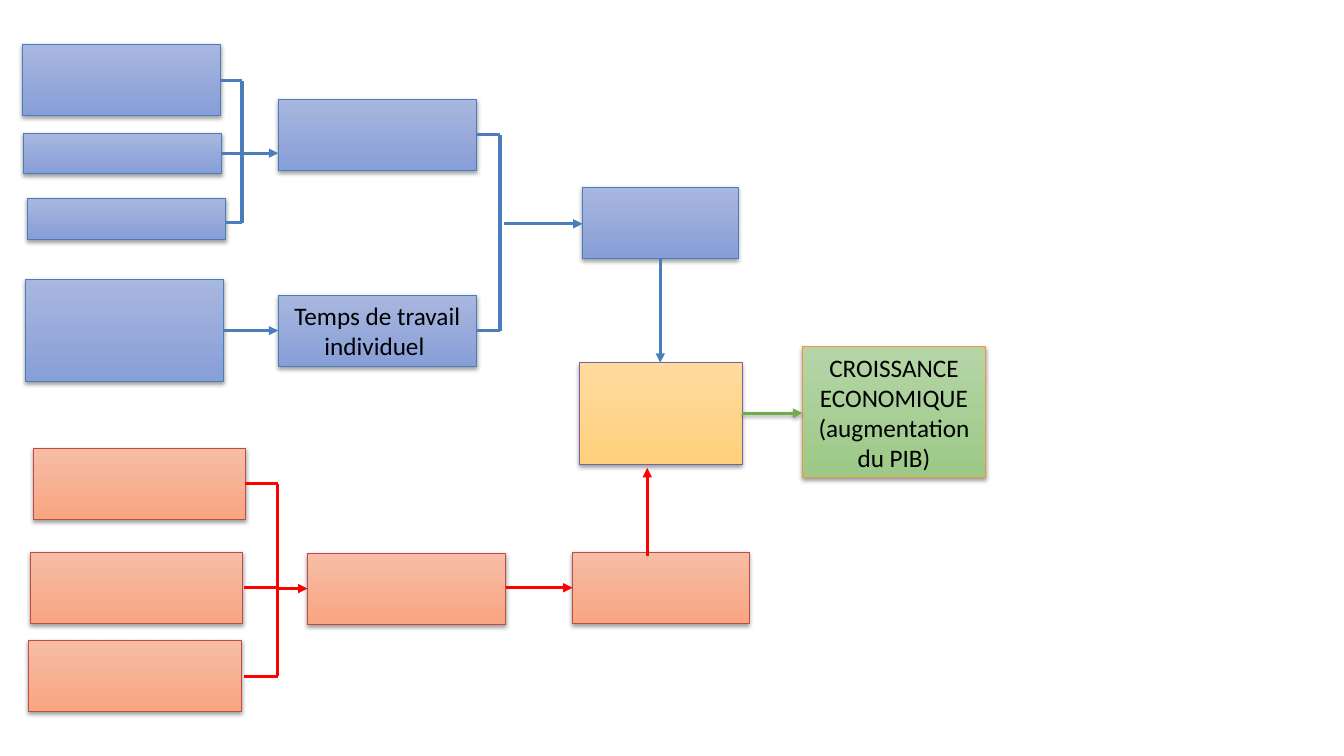
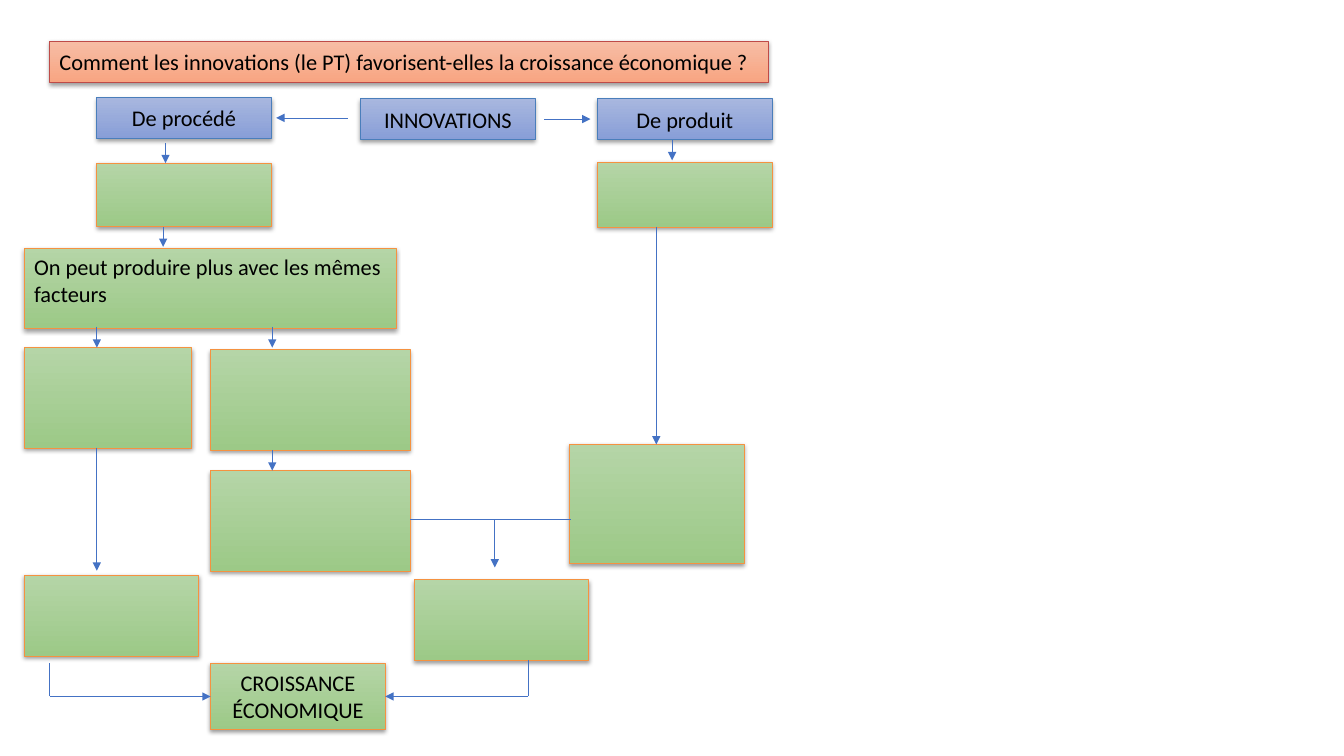
from dataclasses import dataclass

from lxml import etree
from pptx import Presentation
from pptx.dml.color import RGBColor
from pptx.enum import shapes, text
from pptx.oxml.ns import qn
from pptx.util import Cm, Pt


@dataclass(frozen=True)
class Look:
    top: str
    base: str
    edge: str


@dataclass(frozen=True)
class Pen:
    color: str
    width: float
    shade: int = 0


class Theme:
    font = "Calibri"
    ink = "000000"
    large, small = 18, 16
    edge = 0.5
    shade = 38
    blue = Look("A8B7DF", "889ED7", "4A7EBB")
    red = Look("F7BDA5", "F8A582", "BE4B48")
    green = Look("B5D5A7", "9CC987", "F59240")
    gold = Look("FFDB9E", "FFD07C", "7D5FA0")
    blue_pen = Pen("4A7EBB", 2.25)
    red_pen = Pen("FF0000", 2.25)
    green_pen = Pen("70AD47", 2.25, 35)
    thin_pen = Pen("4472C4", 0.5)


def rgb(code):
    return RGBColor.from_string(code)


def cast(effects, alpha):
    """Put a soft shadow that falls straight down into an effect list."""
    drop = etree.SubElement(effects, qn("a:outerShdw"), blurRad="40000", dist="20000",
                            dir="5400000", rotWithShape="0")
    tint = etree.SubElement(drop, qn("a:srgbClr"), val=Theme.ink)
    etree.SubElement(tint, qn("a:alpha"), val=str(alpha * 1000))


@dataclass
class Area:
    """Part of a slide; lengths are in cm from its top left corner."""
    page: object
    left: float
    top: float

    def spot(self, x, y):
        return Cm(self.left + x), Cm(self.top + y)

    def block(self, x, y, w, h, look, words="", size=Theme.small,
              align=text.PP_ALIGN.CENTER, anchor=text.MSO_ANCHOR.MIDDLE):
        box = self.page.shapes.add_shape(shapes.MSO_SHAPE.RECTANGLE,
                                         *self.spot(x, y), Cm(w), Cm(h))
        box.fill.gradient()
        box.fill.gradient_angle = 270
        for stop, code in zip(box.fill.gradient_stops, (look.top, look.base)):
            stop.color.rgb = rgb(code)
        # Evenly spread from edge to edge
        for stop, place in zip(box.fill.gradient_stops, (0, 1)):
            stop.position = place
        box.line.color.rgb = rgb(look.edge)
        box.line.width = Pt(Theme.edge)
        box.shadow.inherit = False
        cast(box.element.spPr.find(qn("a:effectLst")), Theme.shade)
        if words:
            frame = box.text_frame
            frame.word_wrap = True
            frame.vertical_anchor = anchor
            para = frame.paragraphs[0]
            para.alignment = align
            run = para.add_run()
            run.text = words
            run.font.name = Theme.font
            run.font.size = Pt(size)
            run.font.color.rgb = rgb(Theme.ink)

    def line(self, start, end, pen, head=False):
        link = self.page.shapes.add_connector(
            shapes.MSO_CONNECTOR.STRAIGHT, *self.spot(*start), *self.spot(*end))
        link.line.color.rgb = rgb(pen.color)
        link.line.width = Pt(pen.width)
        props = link.element.spPr
        if head:
            etree.SubElement(props.find(qn("a:ln")), qn("a:tailEnd"), type="triangle")
        effects = etree.SubElement(props, qn("a:effectLst"))
        if pen.shade:
            cast(effects, pen.shade)

    def arrow(self, start, end, pen):
        self.line(start, end, pen, head=True)

    def drop(self, x, start, end):
        self.arrow((x, start), (x, end), Theme.thin_pen)

    def merge(self, starts, spine, pen):
        """Lead several points to one upright line."""
        for x, y in starts:
            self.line((x, y), (spine, y), pen)
        self.line((spine, starts[0][1]), (spine, starts[-1][1]), pen)


def labour(area):
    look, pen = Theme.blue, Theme.blue_pen
    wide, tall, slim = 5, 1.79, 1.03
    for x, y, h in ((0, 0, tall), (0.02, 2.23, slim), (0.13, 3.88, slim), (0.08, 5.92, 2.57)):
        area.block(x, y, wide, h, look)
    area.block(6.45, 1.39, wide, tall, look)
    area.block(6.45, 6.32, wide, tall, look, "Temps de travail individuel ", Theme.large)
    area.block(14.12, 3.6, 3.92, tall, look)
    area.merge([(5, 0.91), (5, 2.74), (5.13, 4.49)], 5.54, pen)
    area.merge([(11.45, 2.28), (11.45, 7.21)], 12.04, pen)
    for x, y, end in ((5.54, 2.74, 6.45), (5.08, 7.21, 6.45), (12.14, 4.52, 14.12)):
        area.arrow((x, y), (end, y), pen)
    area.arrow((16.08, 5.41), (16.08, 8.02), pen)


def capital(area):
    look, pen = Theme.red, Theme.red_pen
    for x, y, w in ((0.13, 0, 5.35), (0.05, 2.62, 5.35), (0, 4.83, 5.38),
                    (7.04, 2.64, 5), (13.72, 2.62, 4.45)):
        area.block(x, y, w, 1.79, look)
    area.merge([(5.46, 0.89), (5.44, 3.51), (5.44, 5.74)], 6.29, pen)
    area.arrow((6.29, 3.53), (7.04, 3.53), pen)
    area.arrow((12.04, 3.51), (13.72, 3.51), pen)
    area.arrow((15.6, 2.7), (15.6, 0.49), pen)


def growth(area):
    area.block(0, 0.4, 4.09, 2.57, Theme.gold)
    area.block(5.61, 0, 4.62, 3.3, Theme.green,
               "CROISSANCE ECONOMIQUE (augmentation du PIB)", Theme.large)
    area.arrow((4.09, 1.67), (5.61, 1.67), Theme.green_pen)


def header(area):
    area.block(0, 0, 18.11, 1.03, Theme.red,
               "Comment les innovations (le PT) favorisent-elles la croissance économique ?",
               align=text.PP_ALIGN.LEFT)
    for x, y, words in ((1.19, 1.42, "De procédé"), (7.84, 1.45, "INNOVATIONS"),
                        (13.81, 1.45, "De produit")):
        area.block(x, y, 4.4, 1.03, Theme.blue, words)
    area.arrow((7.51, 1.93), (5.71, 1.93), Theme.thin_pen)
    area.arrow((12.47, 1.96), (13.63, 1.96), Theme.thin_pen)


def process(area):
    look = Theme.green
    area.block(1.83, 0.51, 4.4, 1.6, look)
    area.block(0, 2.65, 9.37, 2.03, look, "On peut produire plus avec les mêmes facteurs",
               align=text.PP_ALIGN.LEFT, anchor=text.MSO_ANCHOR.TOP)
    for x, y, w, h in ((0, 5.16, 4.22, 2.53), (4.7, 5.21, 5.03, 2.53),
                       (4.7, 8.26, 5.03, 2.53), (0, 10.9, 4.4, 2.03)):
        area.block(x, y, w, h, look)
    for x, start, end in ((3.56, 0, 0.51), (3.5, 2.12, 2.62), (1.83, 4.63, 5.16),
                          (6.25, 4.63, 5.16), (6.25, 7.75, 8.26), (1.83, 7.68, 10.78)):
        area.drop(x, start, end)


def product(area):
    area.block(0.71, 0.56, 4.4, 1.63, Theme.green)
    area.block(0, 7.67, 4.4, 3, Theme.green)
    area.drop(2.59, 0, 0.51)
    area.drop(2.19, 2.19, 7.67)


def outcome(area):
    pen, floor = Theme.thin_pen, 4.47
    area.block(9.19, 1.53, 4.4, 2.03, Theme.green)
    area.block(4.06, 3.63, 4.4, 1.68, Theme.green, "CROISSANCE ÉCONOMIQUE")
    area.line((9.09, 0), (13.15, 0), pen)
    area.drop(11.22, 0, 1.22)
    for x, y, end in ((0, 3.63, 4.06), (12.06, 3.56, 8.46)):
        area.line((x, y), (x, floor), pen)
        area.arrow((x, floor), (end, floor), pen)


def main():
    deck = Presentation()
    deck.slide_width, deck.slide_height = Cm(33.87), Cm(19.05)
    plans = (
        ((labour, 0.56, 1.12), (capital, 0.71, 11.3), (growth, 14.61, 8.74)),
        ((header, 1.25, 1.04), (process, 0.61, 3.6), (product, 14.35, 3.53),
         (outcome, 1.25, 13.2)),
    )
    for plan in plans:
        page = deck.slides.add_slide(deck.slide_layouts[6])
        for draw, left, top in plan:
            draw(Area(page, left, top - 0.12 if draw is outcome else top))
    deck.save("out.pptx")


if __name__ == "__main__":
    main()
